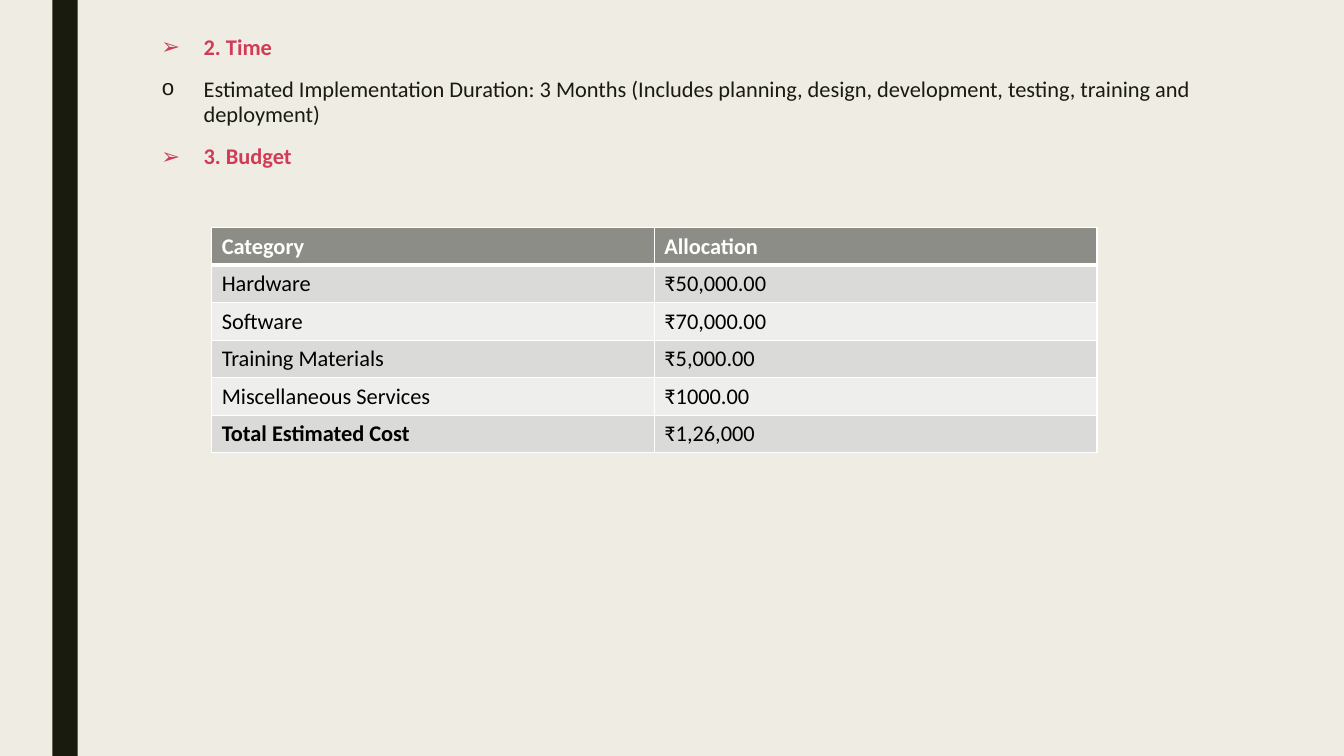
import pptx
import pptx.util
import pptx.dml.color
import pptx.enum.shapes
import pptx.enum.text
import pptx.oxml
import pptx.oxml.ns

Inches = pptx.util.Inches
Pt = pptx.util.Pt
RGBColor = pptx.dml.color.RGBColor

CREAM = RGBColor(0xEF, 0xED, 0xE3)
DARK = RGBColor(0x19, 0x1B, 0x0E)
RED = RGBColor(0xD1, 0x3B, 0x56)
WHITE = RGBColor(0xFF, 0xFF, 0xFF)
BLACK = RGBColor(0, 0, 0)
HEADER_GREY = RGBColor(0x8C, 0x8D, 0x86)
BAND_DARK = RGBColor(0xDA, 0xDB, 0xD9)
BAND_LIGHT = RGBColor(0xEE, 0xEE, 0xED)
NAMESPACE = pptx.oxml.ns.nsdecls("a")


def add_span(para, text, color, bold):
    span = para.add_run()
    span.text = text
    span.font.name = "Calibri"
    span.font.size = Pt(16)
    span.font.bold = bold
    span.font.color.rgb = color


def add_border(cell, position, side, width):
    border = pptx.oxml.parse_xml(
        f'<a:ln{side} {NAMESPACE} w="{Pt(width)}"><a:solidFill>'
        f'<a:srgbClr val="{WHITE}"/></a:solidFill></a:ln{side}>')
    cell._tc.get_or_add_tcPr().insert(position, border)


deck = pptx.Presentation()
deck.slide_width = Inches(13.33)
deck.slide_height = Inches(7.5)
page = deck.slides.add_slide(deck.slide_layouts[1])
page.background.fill.solid()
page.background.fill.fore_color.rgb = CREAM
title = page.shapes.title
title.element.getparent().remove(title.element)

stripe = page.shapes.add_shape(
    pptx.enum.shapes.MSO_SHAPE.RECTANGLE,
    Inches(0.52), Inches(0), Inches(0.25), Inches(7.5))
stripe.shadow.inherit = False
stripe.fill.solid()
stripe.fill.fore_color.rgb = DARK
stripe.line.fill.background()

body = page.placeholders[1]
body.left, body.top = Inches(1.5), Inches(0.3)
body.width, body.height = Inches(10.5), Inches(6.8)
frame = body.text_frame
frame.word_wrap = True
frame.auto_size = pptx.enum.text.MSO_AUTO_SIZE.NONE
frame.vertical_anchor = pptx.enum.text.MSO_ANCHOR.TOP

points = [
    ("➢", "2. Time", RED, True),
    ("o", "Estimated Implementation Duration: 3 Months (Includes planning, "
          "design, development, testing, training and deployment)", DARK, False),
    ("➢", "3. Budget", RED, True),
]
for index, (bullet, text, color, bold) in enumerate(points):
    para = frame.add_paragraph() if index else frame.paragraphs[0]
    para.line_spacing = 0.94
    para.space_before = Pt(10)
    para.space_after = Pt(2)
    properties = para._p.get_or_add_pPr()
    properties.set("marL", str(Inches(0.42)))
    properties.set("indent", str(Inches(-0.42)))
    if bullet == "o":
        properties.append(pptx.oxml.parse_xml(
            f'<a:buFont {NAMESPACE} typeface="Courier New"/>'))
    properties.append(pptx.oxml.parse_xml(
        f'<a:buChar {NAMESPACE} char="{bullet}"/>'))
    add_span(para, text, color, bold)

budget = [
    ("Category", "Allocation"),
    ("Hardware", "₹50,000.00"),
    ("Software", "₹70,000.00"),
    ("Training Materials", "₹5,000.00"),
    ("Miscellaneous Services", "₹1000.00"),
    ("Total Estimated Cost", "₹1,26,000"),
]
table = page.shapes.add_table(
    len(budget), 2, Inches(2.1), Inches(2.26),
    Inches(8.78), Inches(0.37 * len(budget))).table
for row, entries in enumerate(budget):
    header = row == 0
    for column, text in enumerate(entries):
        cell = table.cell(row, column)
        cell.fill.solid()
        cell.fill.fore_color.rgb = (
            HEADER_GREY if header else BAND_DARK if row % 2 else BAND_LIGHT)
        bold = header or (row == len(budget) - 1 and column == 0)
        add_span(cell.text_frame.paragraphs[0], text,
                 WHITE if header else BLACK, bold)
        widths = {"L": 1, "R": 1, "T": 3 if row == 1 else 1, "B": 3 if header else 1}
        for position, (side, width) in enumerate(widths.items()):
            add_border(cell, position, side, width)

deck.save("out.pptx")
